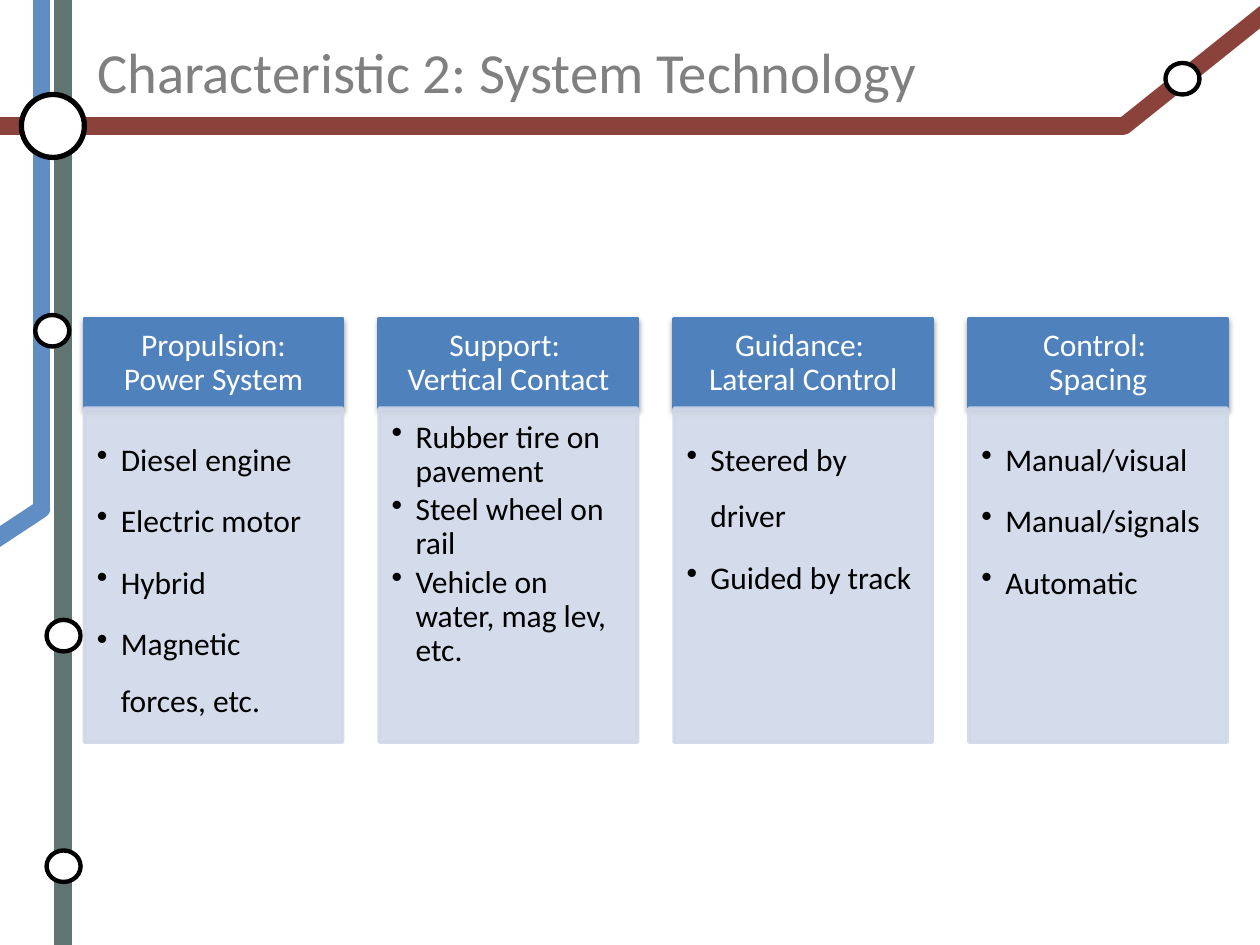
from lxml.etree import SubElement
from pptx import Presentation
from pptx.dml.color import RGBColor
from pptx.enum.shapes import MSO_CONNECTOR, MSO_SHAPE
from pptx.enum.text import MSO_ANCHOR, PP_ALIGN
from pptx.oxml.ns import qn
from pptx.util import Inches, Pt

FONT = "Calibri"
COLORS = {
    "green": "607472",
    "blue": "608DC4",
    "red": "8A423A",
    "white": "FFFFFF",
    "black": "000000",
    "title": "808080",
    "header": "4F81BD",
    "body": "D0D8E8",
}
TRACKS = [
    ("green", (0.5, 7.5), (0.5, 0)),
    ("blue", (0.33, 4.04), (0.33, 0)),
    ("blue", (0.33, 4.04), (-0.17, 4.37)),
    ("red", (0, 1), (8.92, 1)),
    ("red", (10.17, 0), (8.92, 1)),
]
STATIONS = [(0.37, 4.92), (0.37, 6.75), (0.28, 2.5), (9.25, 0.5)]
COLUMNS = [
    ("Propulsion: Power System", 1.5,
     ["Diesel engine", "Electric motor", "Hybrid", "Magnetic forces, etc."]),
    ("Support: \vVertical Contact", 0.9,
     ["Rubber tire on pavement", "Steel wheel on rail",
      "Vehicle on water, mag lev, etc."]),
    ("Guidance: \vLateral Control", 1.5,
     ["Steered by driver", "Guided by track"]),
    ("Control: \vSpacing", 1.5,
     ["Manual/visual", "Manual/signals", "Automatic"]),
]
COLUMN_LEFT, COLUMN_STEP, COLUMN_WIDTH = 0.67, 2.34, 2.05
HEADER_TOP, HEADER_HEIGHT, BODY_HEIGHT = 2.53, 0.71, 2.65


def rgb(name):
    return RGBColor.from_string(COLORS[name])


def format_runs(paragraph, size, color):
    for run in paragraph.runs:
        run.font.name = FONT
        run.font.size = Pt(size)
        run.font.color.rgb = rgb(color)


def set_insets(text_frame, left, top, right, bottom):
    text_frame.margin_left = Inches(left)
    text_frame.margin_top = Inches(top)
    text_frame.margin_right = Inches(right)
    text_frame.margin_bottom = Inches(bottom)


def add_title(slide, text):
    title = slide.shapes.title
    title.left, title.top = Inches(0.67), Inches(0.3)
    title.width, title.height = Inches(8.25), Inches(0.53)
    title.text_frame.text = text
    title.text_frame.vertical_anchor = MSO_ANCHOR.MIDDLE
    paragraph = title.text_frame.paragraphs[0]
    paragraph.alignment = PP_ALIGN.LEFT
    format_runs(paragraph, 32.4, "title")


def add_track(slide, color, start, end):
    track = slide.shapes.add_connector(
        MSO_CONNECTOR.STRAIGHT, *map(Inches, start + end))
    track.line.color.rgb = rgb(color)
    track.line.width = Pt(10)
    if start[0] != end[0] and start[1] != end[1]:
        track.line._get_or_add_ln().set("cap", "rnd")
    SubElement(track._element.spPr, qn("a:effectLst"))


def add_box(slide, preset, bounds, fill, line, line_width):
    shape = slide.shapes.add_shape(preset, *map(Inches, bounds))
    shape.shadow.inherit = False
    shape.fill.solid()
    shape.fill.fore_color.rgb = rgb(fill)
    shape.line.color.rgb = rgb(line)
    shape.line.width = Pt(line_width)
    return shape


def add_station(slide, left, top, width, height, line_width):
    add_box(slide, MSO_SHAPE.OVAL, (left, top, width, height),
            "white", "black", line_width)


def add_alpha(color_element, percent):
    SubElement(color_element, qn("a:alpha")).set("val", str(percent * 1000))


def add_drop_shadow(shape):
    effects = shape._element.spPr.find(qn("a:effectLst"))
    shadow = SubElement(effects, qn("a:outerShdw"), blurRad=str(Pt(3.1)),
                        dist=str(Pt(1.6)), dir="5400000", rotWithShape="0")
    color = SubElement(shadow, qn("a:srgbClr"), val=COLORS["black"])
    add_alpha(color, 38)


def add_header(slide, left, text):
    header = add_box(slide, MSO_SHAPE.RECTANGLE,
                     (left, HEADER_TOP, COLUMN_WIDTH, HEADER_HEIGHT),
                     "header", "header", 2)
    add_drop_shadow(header)
    text_frame = header.text_frame
    set_insets(text_frame, 0.14, 0.08, 0.14, 0.08)
    text_frame.vertical_anchor = MSO_ANCHOR.MIDDLE
    text_frame.text = text
    paragraph = text_frame.paragraphs[0]
    paragraph.alignment = PP_ALIGN.CENTER
    paragraph.line_spacing = 0.9
    format_runs(paragraph, 18, "white")


def format_bullet(paragraph, line_spacing):
    properties = paragraph._p.get_or_add_pPr()
    properties.set("marL", str(Inches(0.19)))
    properties.set("indent", str(Inches(-0.19)))
    SubElement(properties, qn("a:buChar"), char="•")
    paragraph.level = 1
    paragraph.alignment = PP_ALIGN.LEFT
    paragraph.line_spacing = line_spacing
    paragraph.space_after = Pt(2.7)
    format_runs(paragraph, 18, "black")


def add_body(slide, left, items, line_spacing):
    body = add_box(slide, MSO_SHAPE.RECTANGLE,
                   (left, HEADER_TOP + HEADER_HEIGHT, COLUMN_WIDTH, BODY_HEIGHT),
                   "body", "body", 2)
    for color in body._element.spPr.iter(qn("a:srgbClr")):
        add_alpha(color, 90)
    text_frame = body.text_frame
    set_insets(text_frame, 0.1, 0.1, 0.14, 0.16)
    text_frame.vertical_anchor = MSO_ANCHOR.TOP
    text_frame.text = "\n".join(items)
    for paragraph in text_frame.paragraphs:
        format_bullet(paragraph, line_spacing)


def main():
    presentation = Presentation()
    presentation.slide_width = Inches(10)
    presentation.slide_height = Inches(7.5)
    slide = presentation.slides.add_slide(presentation.slide_layouts[5])
    for color, start, end in TRACKS:
        add_track(slide, color, start, end)
    add_station(slide, 0.17, 0.75, 0.5, 0.5, 3)
    for left, top in STATIONS:
        add_station(slide, left, top, 0.27, 0.25, 2.5)
    add_title(slide, "Characteristic 2: System Technology")
    for index, (heading, line_spacing, items) in enumerate(COLUMNS):
        left = COLUMN_LEFT + index * COLUMN_STEP
        add_header(slide, left, heading)
        add_body(slide, left, items, line_spacing)
    presentation.save("out.pptx")


if __name__ == "__main__":
    main()
